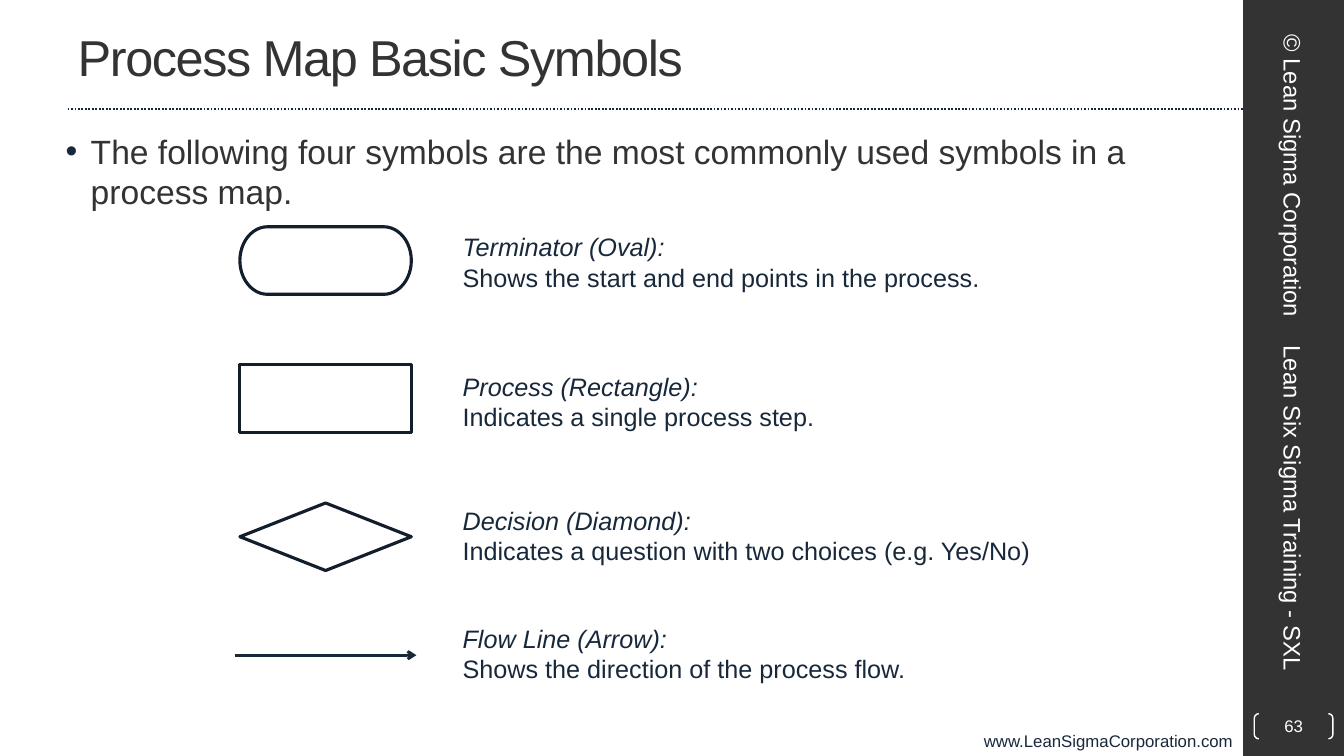
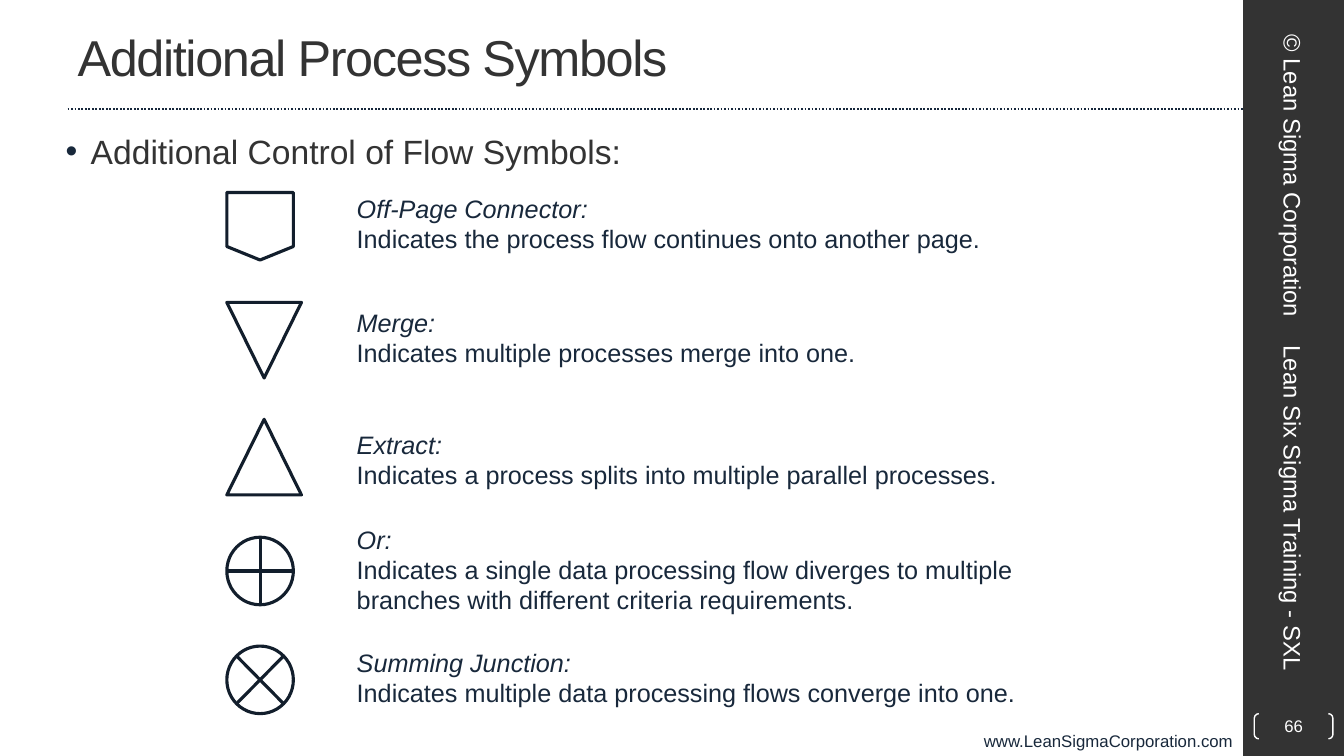
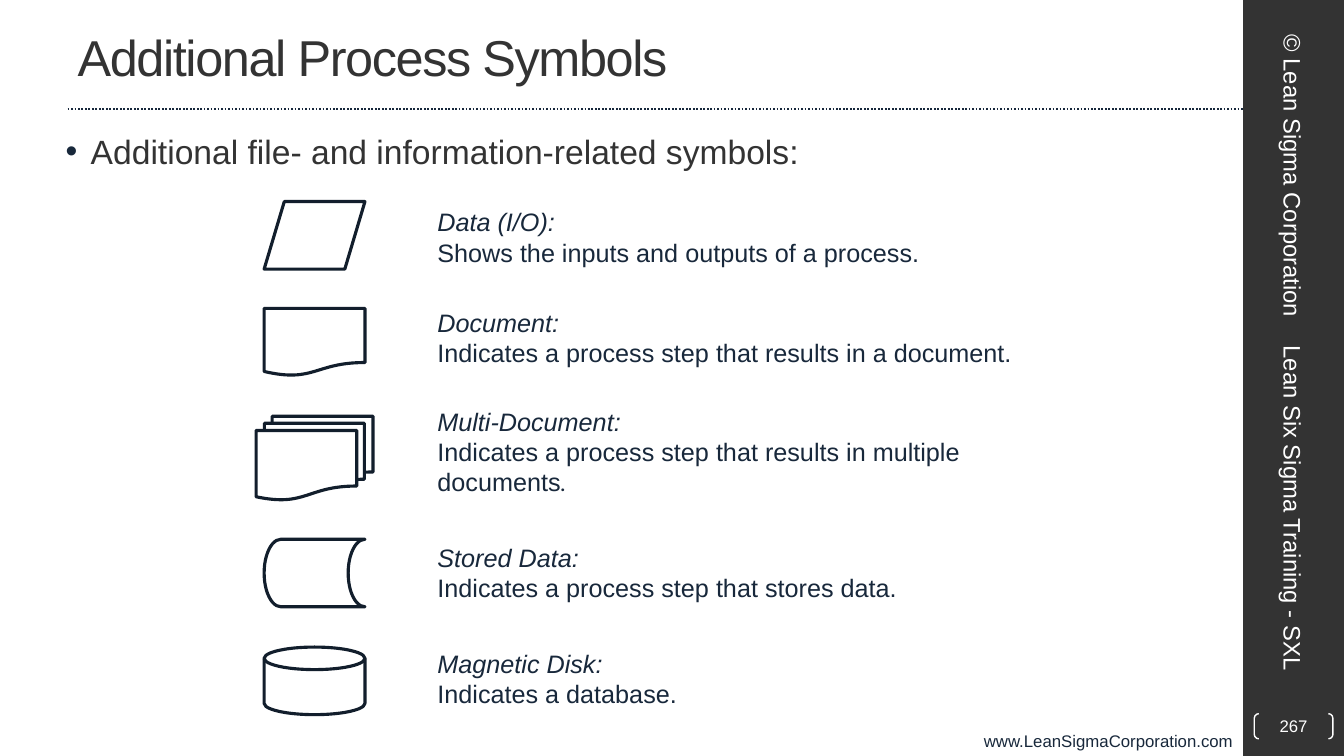
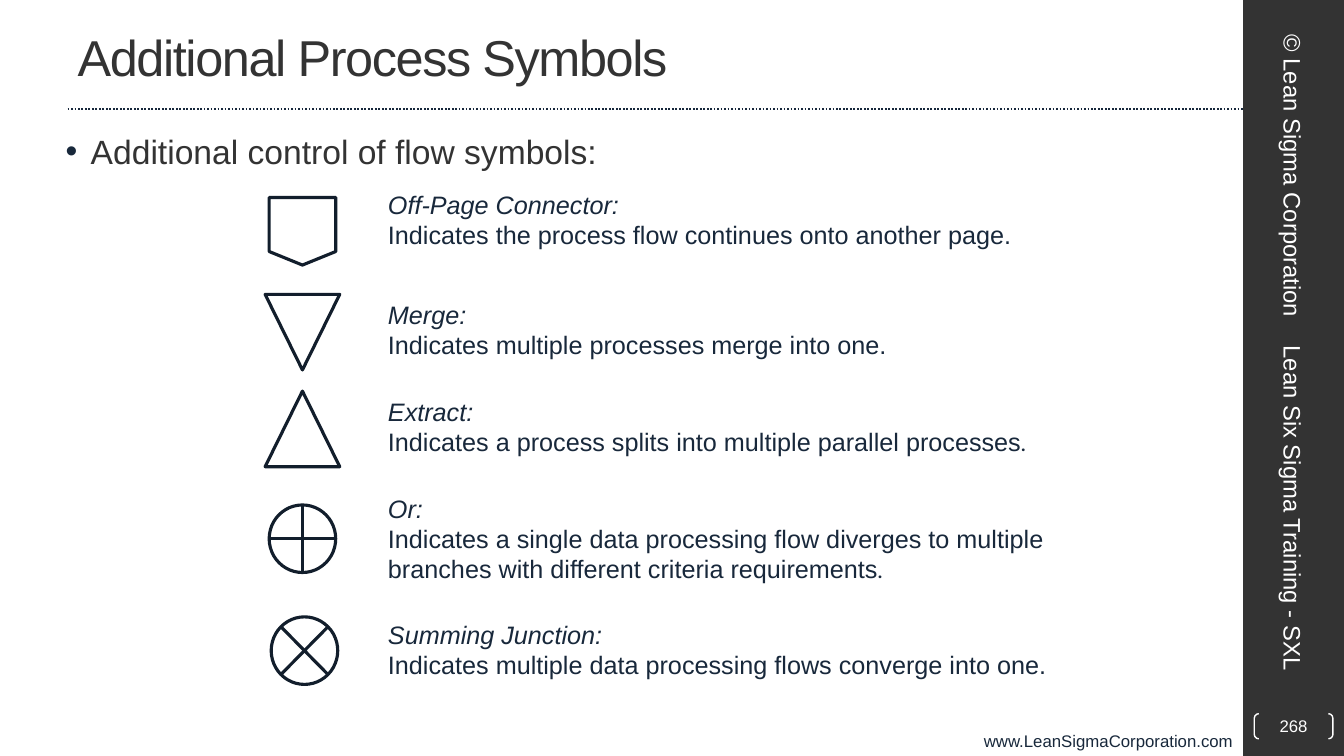
from dataclasses import dataclass
from typing import Optional

from lxml import etree
from pptx import Presentation
from pptx.dml.color import RGBColor
from pptx.enum.dml import MSO_LINE
from pptx.enum.shapes import MSO_CONNECTOR, MSO_SHAPE
from pptx.enum.text import MSO_ANCHOR, MSO_AUTO_SIZE, PP_ALIGN
from pptx.oxml.ns import qn
from pptx.util import Inches, Pt

# Theme
COLORS = {
    "band": "333333",
    "heading": "333333",
    "text": "18283B",
    "rule": "17273B",
    "outline": "121E2C",
    "white": "FFFFFF",
}
FONT, STOP_FONT = "Arial", "Karla"
SLIDE_W, SLIDE_H, BAND_W = 13.33, 7.5, 1
CONTENT_R = SLIDE_W - BAND_W

LEFT, CENTER, RIGHT = PP_ALIGN.LEFT, PP_ALIGN.CENTER, PP_ALIGN.RIGHT
TOP, MIDDLE = MSO_ANCHOR.TOP, MSO_ANCHOR.MIDDLE
RECTANGLE, BRACKETS = MSO_SHAPE.RECTANGLE, MSO_SHAPE.DOUBLE_BRACKET
STRAIGHT, DOTTED = MSO_CONNECTOR.STRAIGHT, MSO_LINE.ROUND_DOT

TERMINATOR = MSO_SHAPE.FLOWCHART_TERMINATOR
PROCESS = MSO_SHAPE.FLOWCHART_PROCESS
DECISION = MSO_SHAPE.FLOWCHART_DECISION
OFF_PAGE = MSO_SHAPE.FLOWCHART_OFFPAGE_CONNECTOR
MERGE = MSO_SHAPE.FLOWCHART_MERGE
EXTRACT = MSO_SHAPE.FLOWCHART_EXTRACT
OR = MSO_SHAPE.FLOWCHART_OR
SUMMING = MSO_SHAPE.FLOWCHART_SUMMING_JUNCTION
DATA = MSO_SHAPE.FLOWCHART_DATA
DOCUMENT = MSO_SHAPE.FLOWCHART_DOCUMENT
MULTI_DOCUMENT = MSO_SHAPE.FLOWCHART_MULTIDOCUMENT
STORED_DATA = MSO_SHAPE.FLOWCHART_STORED_DATA
MAGNETIC_DISK = MSO_SHAPE.FLOWCHART_MAGNETIC_DISK

# Width and height of each symbol; None stands for the flow line
SIZES = {
    None: (1.8, 0),
    **dict.fromkeys((TERMINATOR, PROCESS, DECISION), (1.7, 0.67)),
    **dict.fromkeys((OFF_PAGE, OR, SUMMING), (0.66, 0.67)),
    **dict.fromkeys((MERGE, EXTRACT), (0.74, 0.75)),
    **dict.fromkeys((DATA, DOCUMENT, STORED_DATA, MAGNETIC_DISK), (1, 0.67)),
    MULTI_DOCUMENT: (1.16, 0.83),
}


@dataclass
class Symbol:
    kind: Optional[MSO_SHAPE]
    label: str
    meaning: str


@dataclass
class Place:
    left: float
    top: float
    text_top: float
    stop_font: str = FONT


@dataclass
class Page:
    number: str
    title: str
    lead: str
    text_left: float
    text_width: float
    symbols: list[Symbol]
    places: list[Place]


# Content
BASIC = [
    Symbol(TERMINATOR, "Terminator (Oval):",
           "Shows the start and end points in the process."),
    Symbol(PROCESS, "Process (Rectangle):", "Indicates a single process step."),
    Symbol(DECISION, "Decision (Diamond):",
           "Indicates a question with two choices (e.g. Yes/No)"),
    Symbol(None, "Flow Line (Arrow):",
           "Shows the direction of the process flow."),
]
FLOW = [
    Symbol(OFF_PAGE, "Off-Page Connector:",
           "Indicates the process flow continues onto another page."),
    Symbol(MERGE, "Merge:", "Indicates multiple processes merge into one."),
    Symbol(EXTRACT, "Extract:",
           "Indicates a process splits into multiple parallel processes."),
    Symbol(OR, "Or:",
           "Indicates a single data processing flow diverges to multiple "
           "branches with different criteria requirements."),
    Symbol(SUMMING, "Summing Junction:",
           "Indicates multiple data processing flows converge into one."),
]
FILES = [
    Symbol(DATA, "Data (I/O):", "Shows the inputs and outputs of a process."),
    Symbol(DOCUMENT, "Document:",
           "Indicates a process step that results in a document."),
    Symbol(MULTI_DOCUMENT, "Multi-Document:",
           "Indicates a process step that results in multiple documents."),
    Symbol(STORED_DATA, "Stored Data:",
           "Indicates a process step that stores data."),
    Symbol(MAGNETIC_DISK, "Magnetic Disk:", "Indicates a database."),
]
ADDITIONAL = "Additional Process Symbols"
PAGES = [
    Page("63", "Process Map Basic Symbols",
         "The following four symbols are the most commonly used symbols in a "
         "process map.", 4.49, 5.9, BASIC,
         [Place(2.38, 2.25, 2.25), Place(2.38, 3.62, 3.63),
          Place(2.38, 4.99, 4.96), Place(2.33, 6.5, 6.13)]),
    Page("66", ADDITIONAL, "Additional Control of Flow Symbols:", 3.44, 7, FLOW,
         [Place(2.25, 1.91, 1.87), Place(2.25, 3, 3), Place(2.25, 4.16, 4.21),
          Place(2.25, 5.33, 5.15), Place(2.25, 6.41, 6.37)]),
    Page("267", ADDITIONAL, "Additional file- and information-related symbols:",
         4.24, 6.67, FILES,
         [Place(2.62, 2, 2), Place(2.62, 3.06, 3),
          Place(2.54, 4.13, 3.98, STOP_FONT),
          Place(2.62, 5.35, 5.33), Place(2.62, 6.42, 6.38)]),
    Page("268", ADDITIONAL, "Additional control of flow symbols:", 3.75, 7.04,
         FLOW,
         [Place(2.67, 1.96, 1.83), Place(2.63, 2.92, 2.92),
          Place(2.63, 3.88, 3.88, STOP_FONT),
          Place(2.67, 5.01, 4.84, STOP_FONT), Place(2.69, 6.12, 6.09)]),
]


# Helpers
def rgb(name: str) -> RGBColor:
    return RGBColor.from_string(COLORS[name])


def add_run(p, text: str, *, size: float = 18, color: str = "text",
            font: str = FONT, italic: bool = False, spacing: float = 0):
    r = p.add_run()
    r.text = text
    r.font.name, r.font.size, r.font.italic = font, Pt(size), italic
    r.font.color.rgb = rgb(color)
    if spacing:
        r.font._element.set("spc", str(round(spacing * 100)))


def set_frame(sp, anchor=TOP, align=LEFT):
    """Prepare the text frame and return its first paragraph."""
    tf = sp.text_frame
    tf.word_wrap, tf.auto_size = True, MSO_AUTO_SIZE.NONE
    tf.vertical_anchor = anchor
    tf.paragraphs[0].alignment = align
    return tf.paragraphs[0]


def move(sp, left: float, top: float, width: float, height: float):
    sp.left, sp.top = Inches(left), Inches(top)
    sp.width, sp.height = Inches(width), Inches(height)


def add_box(s, left: float, top: float, width: float, height: float):
    return s.shapes.add_textbox(Inches(left), Inches(top), Inches(width),
                                Inches(height))


def add_outline(s, kind, left: float, top: float, width: float, height: float,
                color: str, weight: float):
    sp = s.shapes.add_shape(kind, Inches(left), Inches(top), Inches(width),
                            Inches(height))
    sp.shadow.inherit = False
    sp.fill.background()
    sp.line.color.rgb, sp.line.width = rgb(color), Pt(weight)
    return sp


def add_line(s, left: float, right: float, y: float, color: str, weight: float):
    line = s.shapes.add_connector(STRAIGHT, Inches(left), Inches(y),
                                  Inches(right), Inches(y))
    line.line.color.rgb, line.line.width = rgb(color), Pt(weight)
    etree.SubElement(line._element.spPr, qn("a:effectLst"))
    return line


# Slide parts
def add_frame(s, number: str):
    """Side band, web address, rule and page number."""
    band = s.shapes.add_shape(RECTANGLE, Inches(CONTENT_R), 0, Inches(BAND_W),
                              Inches(SLIDE_H))
    band.shadow.inherit = False
    band.fill.solid()
    band.fill.fore_color.rgb = rgb("band")
    band.line.fill.background()

    p = set_frame(add_box(s, 0, 7.2, CONTENT_R, 0.3), align=RIGHT)
    add_run(p, "www.LeanSigmaCorporation.com", size=12)
    add_line(s, 0.67, CONTENT_R, 1.08, "rule", 1.25).line.dash_style = DOTTED

    for text, left, top, width, align in (
            ("© Lean Sigma Corporation", 11.24, 1.48, 3.17, CENTER),
            ("Lean Six Sigma Training - SXL", 10.99, 4.9, 3.67, LEFT)):
        sp = add_box(s, left, top, width, 0.53)
        sp.rotation = 90
        add_run(set_frame(sp, MIDDLE, align), text, size=17, color="white")

    sp = add_outline(s, BRACKETS, 12.44, 7.08, 0.78, 0.25, "white", 1)
    sp.adjustments[0] = 0.18
    tf = sp.text_frame
    tf.margin_left = tf.margin_right = tf.margin_top = tf.margin_bottom = 0
    add_run(set_frame(sp, MIDDLE, CENTER), number, size=12, color="white")


def add_heading(s, title: str, lead: str):
    sp = s.shapes.title
    move(sp, 0.67, 0.03, 11.11, 1.05)
    add_run(set_frame(sp, MIDDLE), title, size=36, color="heading", spacing=-1)

    body = s.placeholders[1]
    move(body, 0.42, 1.25, 11.78, 6)
    p = set_frame(body)
    pPr = p._p.get_or_add_pPr()
    pPr.set("marL", str(Inches(0.38)))
    pPr.set("indent", str(Inches(-0.25)))
    bullet_color = etree.SubElement(pPr, qn("a:buClr"))
    etree.SubElement(bullet_color, qn("a:srgbClr"), val=COLORS["text"])
    etree.SubElement(pPr, qn("a:buChar"), char="•")
    add_run(p, lead, size=24, color="heading")


def add_symbol(s, symbol: Symbol, place: Place, text_left: float,
               text_width: float):
    width, height = SIZES[symbol.kind]
    if symbol.kind is None:
        arrow = add_line(s, place.left, place.left + width, place.top, "text", 2)
        etree.SubElement(arrow.line._get_or_add_ln(), qn("a:tailEnd"),
                         type="arrow")
    else:
        add_outline(s, symbol.kind, place.left, place.top, width, height,
                    "outline", 2.25)

    sp = add_box(s, text_left, place.text_top, text_width, 0.71)
    add_run(set_frame(sp), symbol.label, italic=True)
    p = sp.text_frame.add_paragraph()
    if place.stop_font == FONT:
        add_run(p, symbol.meaning)
    else:
        add_run(p, symbol.meaning[:-1])
        add_run(p, symbol.meaning[-1], font=place.stop_font)


def main():
    prs = Presentation()
    prs.slide_width, prs.slide_height = Inches(SLIDE_W), Inches(SLIDE_H)
    for page in PAGES:
        s = prs.slides.add_slide(prs.slide_layouts[1])
        add_frame(s, page.number)
        add_heading(s, page.title, page.lead)
        for symbol, place in zip(page.symbols, page.places):
            add_symbol(s, symbol, place, page.text_left, page.text_width)
    prs.save("out.pptx")


if __name__ == "__main__":
    main()
